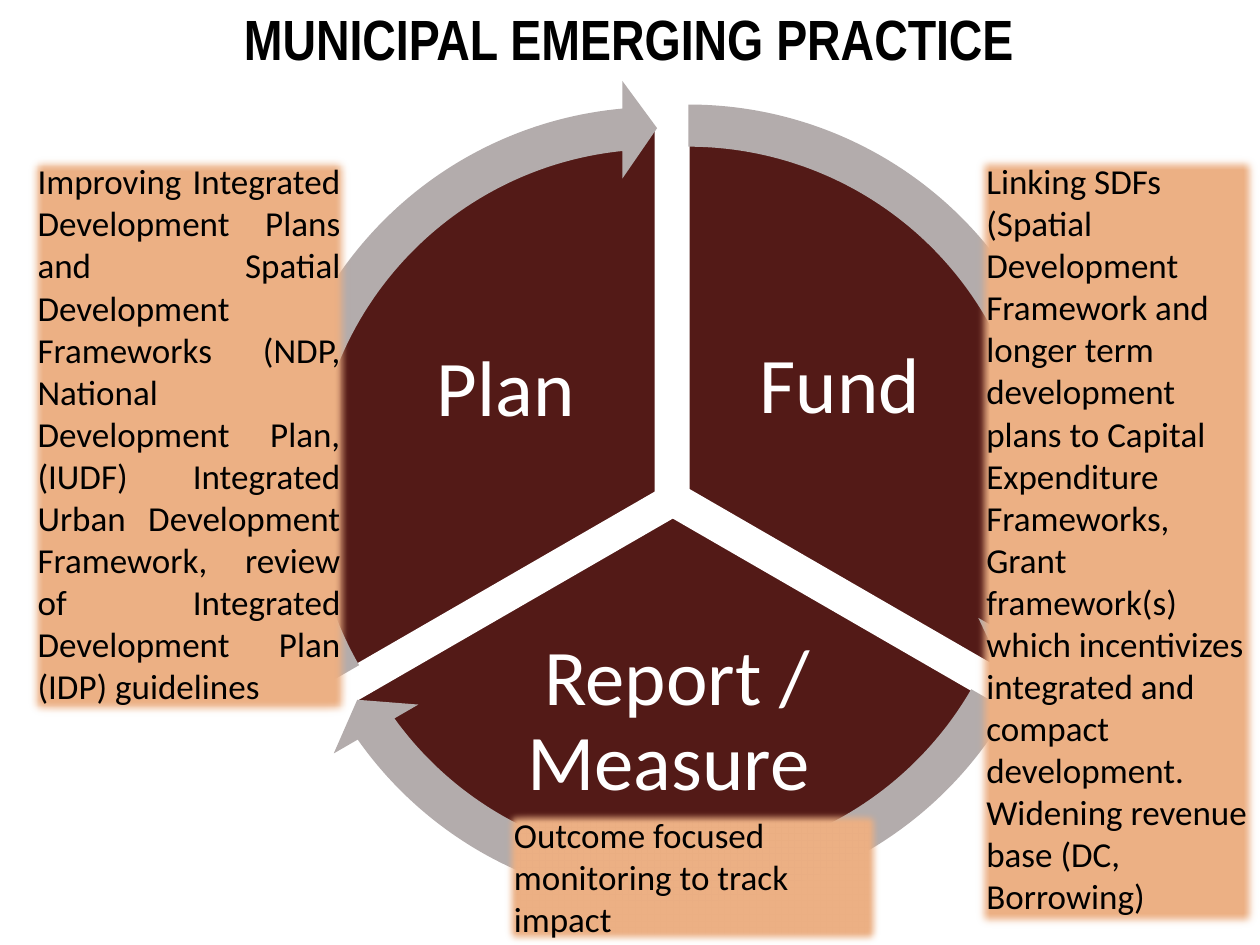
"""Builds the municipal emerging practice slide: a three-part cycle with explanatory notes."""
from lxml import etree
from pptx import Presentation
from pptx.dml.color import RGBColor
from pptx.enum.shapes import MSO_SHAPE
from pptx.enum.text import MSO_ANCHOR, MSO_AUTO_SIZE, PP_ALIGN
from pptx.oxml.ns import qn
from pptx.util import Inches, Pt

COLORS = {
    "maroon": "531A17",
    "grey": "B3ACAC",
    "peach": "ECB084",
    "white": "FFFFFF",
    "black": "000000",
}
PIE_SIZE = 5.84
ARROW_SIZE = 6.57
ARROW_OFFSET = 0.36
STAGES = [
    ("Fund", (5.62, 2.21, 2.09, 1.74), (2.54, 0.97), (162, 18), (14.725, 161.994)),
    ("Report / Measure ", (3.81, 4.97, 3.13, 1.53), (2.42, 1.18), (18, 90), (86.72, 18.005)),
    ("Plan", (2.97, 2.23, 2.09, 1.74), (2.29, 0.99), (90, 162), (158.73, 90)),
]
NOTES = [
    ((0.2, 1.22, 2.6, 4.48), PP_ALIGN.JUSTIFY, [
        "Improving Integrated Development Plans and Spatial Development Frameworks "
        "(NDP, National Development Plan, (IUDF) Integrated Urban Development Framework, "
        "review of Integrated Development Plan (IDP) guidelines",
    ]),
    ((7.73, 1.22, 2.27, 6.16), PP_ALIGN.LEFT, [
        "Linking SDFs (Spatial Development Framework and longer term development plans "
        "to Capital Expenditure Frameworks,",
        "Grant framework(s) which incentivizes integrated and compact development.",
        "Widening revenue base (DC, Borrowing)",
    ]),
    ((3.98, 6.41, 3.03, 1.11), PP_ALIGN.LEFT, ["Outcome focused monitoring to track impact"]),
]


class CycleSlide:
    """Holds the style and the current slide."""

    body_font = "Calibri"
    title_font = "Arial Narrow"

    def __init__(self, presentation):
        self.slide = presentation.slides.add_slide(presentation.slide_layouts[5])

    def color(self, name):
        return RGBColor.from_string(COLORS[name])

    def set_text(self, paragraph, text, size, color, align, font=body_font):
        paragraph.text = text
        paragraph.alignment = align
        paragraph.font.size = Pt(size)
        paragraph.font.name = font
        paragraph.font.color.rgb = self.color(color)

    def title(self, text, box):
        heading = self.slide.shapes.title
        heading.left, heading.top, heading.width, heading.height = map(Inches, box)
        frame = heading.text_frame
        frame.auto_size = MSO_AUTO_SIZE.NONE
        frame.vertical_anchor = MSO_ANCHOR.MIDDLE
        line = frame.paragraphs[0]
        self.set_text(line, text, 32.4, "black", PP_ALIGN.CENTER, self.title_font)
        line.font.bold = True

    def shape(self, kind, box, fill, adjustments=()):
        shape = self.slide.shapes.add_shape(kind, *map(Inches, box))
        shape.shadow.inherit = False
        shape.fill.solid()
        shape.fill.fore_color.rgb = self.color(fill)
        shape.line.fill.background()
        for index, value in enumerate(adjustments):
            shape.adjustments[index] = value
        return shape

    def sector(self, left, top, angles):
        sector = self.shape(MSO_SHAPE.PIE, (left, top, PIE_SIZE, PIE_SIZE), "maroon", angles)
        sector.line.color.rgb = self.color("white")
        sector.line.width = Pt(2)

    def arrow(self, left, top, angles):
        self.shape(MSO_SHAPE.CIRCULAR_ARROW, (left, top, ARROW_SIZE, ARROW_SIZE), "grey",
                   (0.051, 3.275, *angles, 0.059))

    def label(self, text, box):
        frame = self.slide.shapes.add_textbox(*map(Inches, box)).text_frame
        frame.word_wrap = True
        frame.vertical_anchor = MSO_ANCHOR.MIDDLE
        frame.margin_left = frame.margin_right = Inches(0.06)
        frame.margin_top = frame.margin_bottom = Inches(0.06)
        line = frame.paragraphs[0]
        line.line_spacing = 0.9
        self.set_text(line, text, 45, "white", PP_ALIGN.CENTER)

    def note(self, box, align, texts):
        note = self.shape(MSO_SHAPE.RECTANGLE, box, "peach")
        effects = note._element.spPr.find(qn("a:effectLst"))
        etree.SubElement(effects, qn("a:softEdge"), rad=str(Pt(5)))
        frame = note.text_frame
        frame.word_wrap = True
        frame.auto_size = MSO_AUTO_SIZE.SHAPE_TO_FIT_TEXT
        frame.vertical_anchor = MSO_ANCHOR.TOP
        for index, text in enumerate(texts):
            paragraph = frame.add_paragraph() if index else frame.paragraphs[0]
            self.set_text(paragraph, text, 20, "black", align)


def main():
    presentation = Presentation()
    presentation.slide_width = Inches(10)
    presentation.slide_height = Inches(7.5)
    cycle = CycleSlide(presentation)
    cycle.title("MUNICIPAL EMERGING PRACTICE ", (0.28, 0, 9.53, 0.6))
    for name, label_box, (left, top), sector_angles, _ in STAGES:
        cycle.sector(left, top, sector_angles)
        cycle.label(name, label_box)
    for _, _, (left, top), _, arrow_angles in STAGES:
        cycle.arrow(left - ARROW_OFFSET, top - ARROW_OFFSET, arrow_angles)
    for box, align, texts in NOTES:
        cycle.note(box, align, texts)
    presentation.save("out.pptx")


if __name__ == "__main__":
    main()
